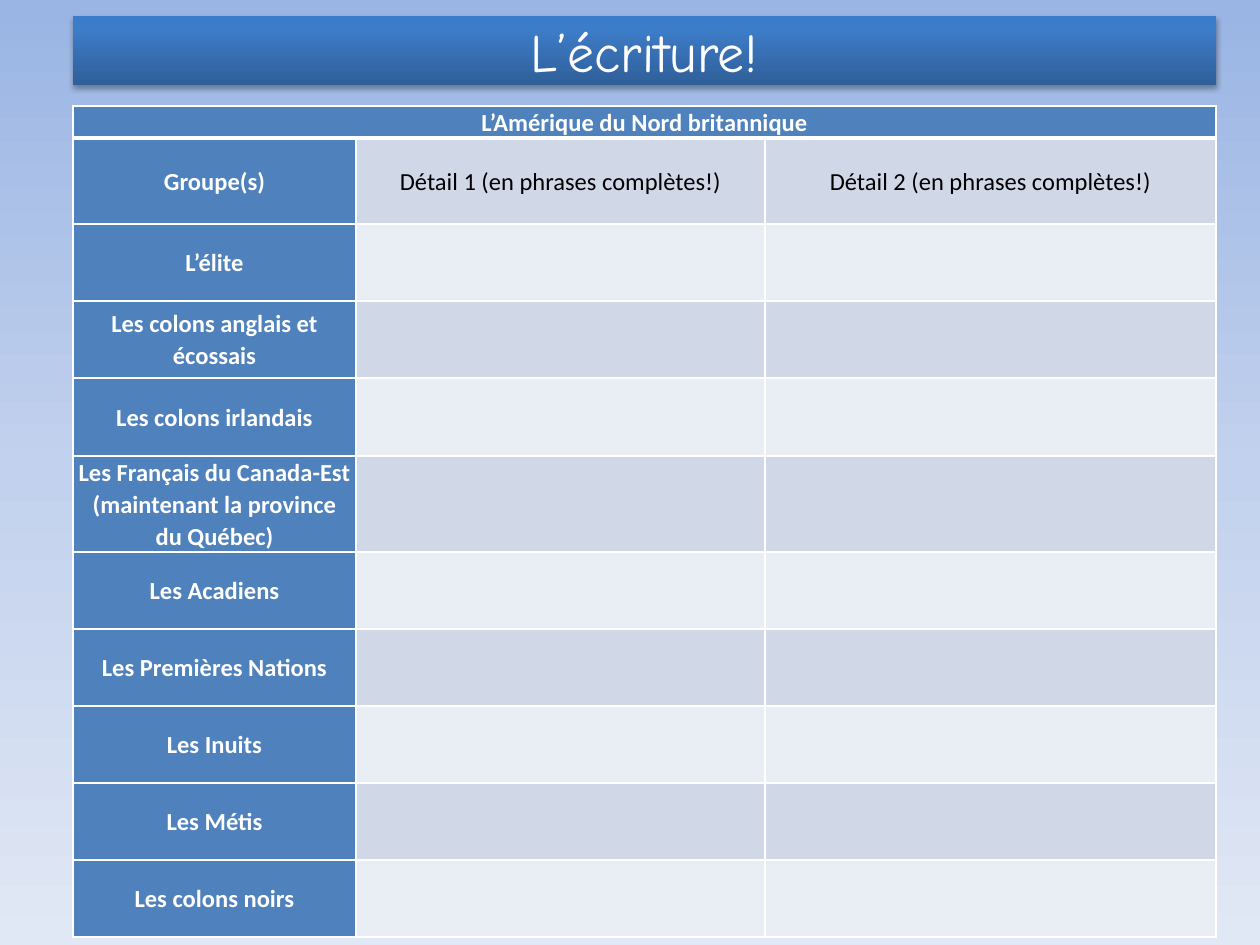
from lxml import etree
from pptx import Presentation, util as u
from pptx.dml.color import RGBColor
from pptx.enum import shapes, text
from pptx.oxml import parse_xml
from pptx.oxml.ns import nsdecls, qn

TITLE = "L’écriture!"
HEADING = "L’Amérique du Nord britannique"
COLUMNS = ["Groupe(s)", "Détail 1 (en phrases complètes!)", "Détail 2 (en phrases complètes!)"]
GROUPS = [
    "L’élite",
    "Les colons anglais et écossais",
    "Les colons irlandais",
    "Les Français du Canada-Est (maintenant la province du Québec)",
    "Les Acadiens",
    "Les Premières Nations",
    "Les Inuits",
    "Les Métis",
    "Les colons noirs",
]
SKY = [(0, "9AB5E4"), (50, "C2D1ED"), (100, "E1E8F5")]
BANNER = [(0, "2F5F99"), (80, "3D7CC7"), (100, "3A7CCB")]
BLUE, BANDS = "4F81BD", ("D0D8E8", "E9EDF4")
WHITE, BLACK = "FFFFFF", "000000"

LEFT, WIDTH = 73, 1143
BANNER_TOP, BANNER_HEIGHT = 16, 69
GRID_TOP = 106
COLUMN_WIDTHS = [283, 409, 451]
HEADING_HEIGHT, LABEL_HEIGHT, GROUP_HEIGHT = 32, 86, 77
TALLER = {"Les colons irlandais": 78, "Les Français du Canada-Est (maintenant la province du Québec)": 96}


def px(n):
    return u.Emu(round(n * 914400 / 126))


def color(value):
    return RGBColor.from_string(value)


def gradient(fill, owner, stops, angle):
    fill.gradient()
    fill.gradient_angle = angle
    stop_list = owner.find(".//" + qn("a:gsLst"))
    for old in list(stop_list):
        stop_list.remove(old)
    for position, value in stops:
        stop = etree.SubElement(stop_list, qn("a:gs"), pos=str(position * 1000))
        etree.SubElement(stop, qn("a:srgbClr"), val=value)


def write(frame, words, size, font, ink, bold=False):
    paragraph = frame.paragraphs[0]
    paragraph.alignment = text.PP_ALIGN.CENTER
    run = paragraph.add_run()
    run.text = words
    run.font.size, run.font.name, run.font.bold = u.Pt(size), font, bold
    run.font.color.rgb = color(ink)
    return paragraph


def border(cell, top, bottom):
    properties = cell._tc.get_or_add_tcPr()
    for place, (side, points) in enumerate([("L", 1), ("R", 1), ("T", top), ("B", bottom)]):
        properties.insert(place, parse_xml(
            f'<a:ln{side} {nsdecls("a")} w="{points * 12700}"><a:solidFill>'
            f'<a:srgbClr val="{WHITE}"/></a:solidFill></a:ln{side}>'))


prs = Presentation()
prs.slide_width, prs.slide_height = px(1260), px(945)
slide = prs.slides.add_slide(prs.slide_layouts[6])
gradient(slide.background.fill, slide.element, SKY, 270)

banner = slide.shapes.add_shape(
    shapes.MSO_SHAPE.RECTANGLE, px(LEFT), px(BANNER_TOP), px(WIDTH), px(BANNER_HEIGHT))
gradient(banner.fill, banner.element, BANNER, 90)
banner.line.fill.background()
banner.shadow.inherit = False
shadow = banner.element.spPr.find(qn("a:effectLst"))
shadow.append(parse_xml(
    f'<a:outerShdw {nsdecls("a")} blurRad="40000" dist="23000" dir="5400000" rotWithShape="0">'
    f'<a:srgbClr val="{BLACK}"><a:alpha val="35000"/></a:srgbClr></a:outerShdw>'))
banner.text_frame.vertical_anchor = text.MSO_ANCHOR.MIDDLE
write(banner.text_frame, TITLE, 30.8, "Comic Neue", WHITE)

rows = [[HEADING, "", ""], COLUMNS] + [[group, "", ""] for group in GROUPS]
heights = [HEADING_HEIGHT, LABEL_HEIGHT] + [TALLER.get(group, GROUP_HEIGHT) for group in GROUPS]
grid = slide.shapes.add_table(
    len(rows), len(COLUMNS), px(LEFT), px(GRID_TOP), px(WIDTH), px(sum(heights))).table
for column, width in zip(grid.columns, COLUMN_WIDTHS):
    column.width = px(width)
for row, height in zip(grid.rows, heights):
    row.height = px(height)
grid.cell(0, 0).merge(grid.cell(0, 2))

for r, row in enumerate(rows):
    for c, words in enumerate(row):
        cell = grid.cell(r, c)
        strong = r == 0 or c == 0
        cell.fill.solid()
        cell.fill.fore_color.rgb = color(BLUE if strong else BANDS[(r - 1) % 2])
        border(cell, top=3 if r == 1 else 1, bottom=3 if r == 0 else 1)
        cell.margin_left = cell.margin_right = px(5)
        cell.margin_top = cell.margin_bottom = 0
        if r:
            cell.vertical_anchor = text.MSO_ANCHOR.MIDDLE
        if words:
            paragraph = write(cell.text_frame, words, 14, "Calibri", WHITE if strong else BLACK, strong)
            paragraph.line_spacing = 1.07

prs.save("out.pptx")
